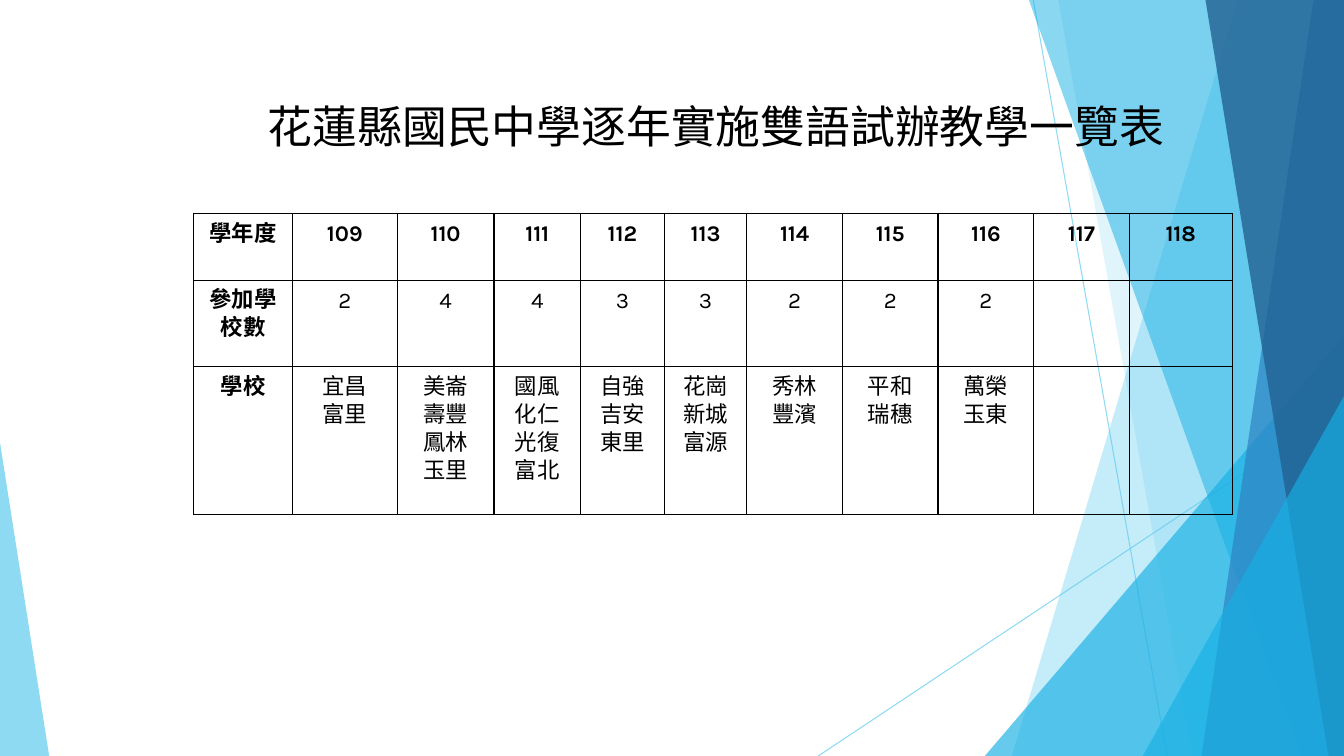
from dataclasses import dataclass
from typing import Any

from lxml.etree import SubElement
from pptx import Presentation
from pptx.dml.color import RGBColor
from pptx.enum.shapes import MSO_CONNECTOR, MSO_SHAPE
from pptx.enum.text import MSO_ANCHOR, MSO_AUTO_SIZE, PP_ALIGN
from pptx.oxml.ns import qn
from pptx.util import Cm, Pt

BLACK = RGBColor(0x00, 0x00, 0x00)
SKY = RGBColor(0x5F, 0xCB, 0xEF)
CYAN = RGBColor(0x17, 0xB0, 0xE4)
BLUE = RGBColor(0x2E, 0x83, 0xC3)
NAVY = RGBColor(0x22, 0x62, 0x92)

WIDE, HIGH = 33.87, 19.05
TITLE = "花蓮縣國民中學逐年實施雙語試辦教學一覽表"


@dataclass
class Ray:
    start: tuple[float, float]
    end: tuple[float, float]


@dataclass
class Pane:
    """Full-height shape with a slanted left edge, reaching the right side."""
    top: float
    foot: float
    color: RGBColor
    alpha: int


@dataclass
class Peak:
    """Right triangle standing on the bottom of the slide."""
    left: float
    top: float
    width: float
    apex: float
    color: RGBColor
    alpha: int


@dataclass
class Year:
    width: float
    year: str
    count: str = ""
    schools: str = ""


RAYS = [Ray((26.04, 0), (29.41, HIGH)), Ray((WIDE, 10.24), (20.62, HIGH))]

FACETS = [
    Pane(31.19, 25.5, SKY, 36),
    Pane(26.67, 30.05, SKY, 20),
    Peak(24.82, 8.46, 9.05, 1, CYAN, 66),
    Pane(25.93, 32.79, CYAN, 50),
    Pane(33.1, 30.28, BLUE, 70),
    Pane(30.38, 33.48, NAVY, 80),
    Peak(28.8, 9.98, 5.07, 1, CYAN, 66),
    Peak(0, 11.15, 1.24, 0, SKY, 70),
]

# In the school lists, \n starts a paragraph and \v breaks a line.
YEARS = [
    Year(2.49, "學年度", "參加學校數", "學校"),
    Year(2.64, "109", "2", "宜昌\n富里"),
    Year(2.44, "110", "4", "美崙\n壽豐\v鳳林\n玉里"),
    Year(2.18, "111", "4", "國風\n化仁\n光復\n富北"),
    Year(2.11, "112", "3", "自強\v吉安\n東里"),
    Year(2.08, "113", "3", "花崗\v新城\n富源"),
    Year(2.41, "114", "2", "秀林\n豐濱"),
    Year(2.41, "115", "2", "平和\n瑞穗"),
    Year(2.41, "116", "2", "萬榮\n玉東"),
    Year(2.41, "117"),
    Year(2.59, "118"),
]
ROWS = [1.68, 2.18, 3.73]

CELL = {side: Cm(0.15) for side in
        ("margin_left", "margin_right", "margin_top", "margin_bottom")}
CELL["vertical_anchor"] = MSO_ANCHOR.TOP
PARA = {"alignment": PP_ALIGN.CENTER, "line_spacing": Pt(20)}
PLAIN = {"first_row": False, "horz_banding": False}


def apply(item: Any, form: dict[str, Any]) -> None:
    for name, value in form.items():
        setattr(item, name, value)


def style(font: Any, name: str, size: int, bold: bool = False) -> None:
    apply(font, {"name": name, "size": Pt(size), "bold": bold})
    font.color.rgb = BLACK


def fade(fill: Any, color: RGBColor, alpha: int) -> None:
    """Set a solid colour with the given opacity in percent."""
    fill.solid()
    fill.fore_color.rgb = color
    tint = fill._xPr.find(qn("a:solidFill"))[0]
    SubElement(tint, qn("a:alpha"), val=str(alpha * 1000))


def draw_ray(slide: Any, ray: Ray) -> None:
    ends = [Cm(n) for n in (*ray.start, *ray.end)]
    line = slide.shapes.add_connector(MSO_CONNECTOR.STRAIGHT, *ends)
    line.line.width = Pt(0.75)
    fade(line.line.fill, SKY, 70)
    SubElement(line._element.spPr, qn("a:effectLst"))


def draw_facet(slide: Any, facet: Pane | Peak) -> None:
    if isinstance(facet, Pane):
        spots = [(WIDE, 0), (WIDE, HIGH), (facet.foot, HIGH)]
        form = slide.shapes.build_freeform(Cm(facet.top), 0)
        form.add_line_segments([(Cm(x), Cm(y)) for x, y in spots], close=True)
        shape = form.convert_to_shape()
    else:
        box = (facet.left, facet.top, facet.width, HIGH - facet.top)
        shape = slide.shapes.add_shape(
            MSO_SHAPE.ISOSCELES_TRIANGLE, *[Cm(n) for n in box])
        shape.adjustments[0] = facet.apex
    shape.shadow.inherit = False
    shape.line.fill.background()
    fade(shape.fill, facet.color, facet.alpha)


def frame(cell: Any) -> None:
    """Give a cell black borders and no fill."""
    props = cell._tc.get_or_add_tcPr()
    for tag in ("a:lnL", "a:lnR", "a:lnT", "a:lnB"):
        edge = SubElement(props, qn(tag), w=str(Pt(1)))
        ink = SubElement(edge, qn("a:solidFill"))
        SubElement(ink, qn("a:srgbClr"), val=str(BLACK))
    cell.fill.background()


def draw_table(slide: Any) -> None:
    width = sum(year.width for year in YEARS)
    table = slide.shapes.add_table(
        len(ROWS), len(YEARS), Cm(4.88), Cm(5.38), Cm(width), Cm(sum(ROWS))).table
    apply(table, PLAIN)
    for row, height in zip(table.rows, ROWS):
        row.height = Cm(height)
    for c, year in enumerate(YEARS):
        table.columns[c].width = Cm(year.width)
        for r, text in enumerate((year.year, year.count, year.schools)):
            cell = table.cell(r, c)
            apply(cell, CELL)
            frame(cell)
            cell.text_frame.text = text
            for para in cell.text_frame.paragraphs:
                apply(para, PARA)
                style(para.font, "Karla", 16, r == 0 or c == 0)
                for run in para.runs:
                    style(run.font, "Karla", 16, r == 0 or c == 0)


def draw_title(slide: Any) -> None:
    box = slide.shapes.add_textbox(Cm(6.5), Cm(2.36), Cm(23.32), Cm(1.63))
    text = box.text_frame
    apply(text, {"word_wrap": False, "auto_size": MSO_AUTO_SIZE.SHAPE_TO_FIT_TEXT})
    run = text.paragraphs[0].add_run()
    run.text = TITLE
    style(run.font, "Calibri", 32)


def main() -> None:
    deck = Presentation()
    apply(deck, {"slide_width": Cm(WIDE), "slide_height": Cm(HIGH)})
    slide = deck.slides.add_slide(deck.slide_layouts[6])
    for ray in RAYS:
        draw_ray(slide, ray)
    for facet in FACETS:
        draw_facet(slide, facet)
    draw_table(slide)
    draw_title(slide)
    deck.save("out.pptx")


if __name__ == "__main__":
    main()
